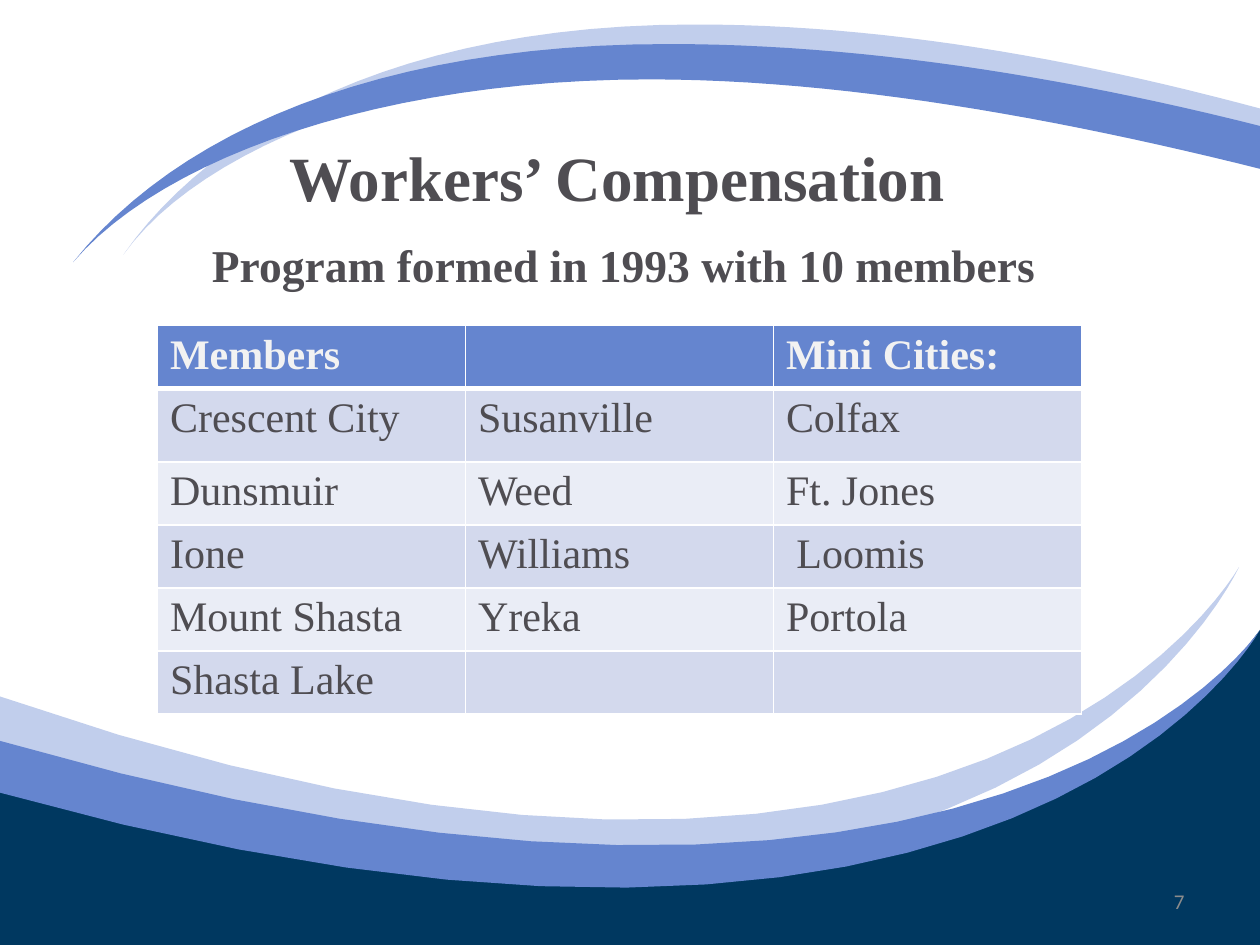
"""Build a slide listing the members of the workers' compensation program."""
from lxml import etree
from pptx import Presentation
from pptx.dml.color import RGBColor
from pptx.enum.text import MSO_ANCHOR, PP_ALIGN
from pptx.oxml.ns import qn
from pptx.util import Pt

LEFT, CENTER, RIGHT = PP_ALIGN.LEFT, PP_ALIGN.CENTER, PP_ALIGN.RIGHT
TOP, MIDDLE, BOTTOM = MSO_ANCHOR.TOP, MSO_ANCHOR.MIDDLE, MSO_ANCHOR.BOTTOM
SERIF, SANS = "Times New Roman", "Calibri"
COLORS = {
    "pale": "C1CEEC", "blue": "6585CF", "navy": "003860", "ink": "4F4D52",
    "header": "F2F2F2", "odd": "D3D9ED", "even": "EAEDF6",
    "rule": "FFFFFF", "number": "8C8C8C",
}
CURVE_STEPS = 24

ARCHES = [
    ("pale", [(720, 62), (612, 33), (504, 14), (397, 14), (230, 14), (122, 72),
              (70.5, 145.5), (115, 83.5), (238, 35.3), (385, 35.3),
              (493, 35.3), (605, 57), (720, 88.5)], []),
    ("blue", [(720, 72), (605, 43), (490, 25.2), (382, 25.2), (216, 25.2), (101, 75.6),
              (41.8, 149.8), (94, 89), (220, 45.4), (371, 45.4),
              (482, 45.4), (605, 67.7), (720, 96.5)], []),
]
WAVES = [
    ("navy", [(0, 124.6), (68.4, 142.6), (178, 174), (314, 175),
              (613, 180), (692, 73.5), (720, 36)], [(720, 216), (0, 216)]),
    ("pale", [(0, 74), (559, 268), (708, 0), (708, 0),
              (708, 0), (573, 300), (0, 108.7)], []),
    ("blue", [(0, 99.4), (569, 264), (720, 36), (720, 36),
              (720, 36), (582, 292), (0, 129)], []),
]
MEMBERS = [
    ("Members", "", "Mini Cities:"),
    ("Crescent City", "Susanville", "Colfax"),
    ("Dunsmuir", "Weed", "Ft. Jones"),
    ("Ione", "Williams", " Loomis"),
    ("Mount Shasta", "Yreka", "Portola"),
    ("Shasta Lake", "", ""),
]


def rgb(name):
    """Return the named colour."""
    return RGBColor.from_string(COLORS[name])


def trace(knots):
    """Return points along a chain of cubic curves."""
    points = [knots[0]]
    for start in range(0, len(knots) - 1, 3):
        curve = knots[start:start + 4]
        for step in range(1, CURVE_STEPS + 1):
            t = step / CURVE_STEPS
            weights = ((1 - t) ** 3, 3 * t * (1 - t) ** 2, 3 * t * t * (1 - t), t ** 3)
            points.append(tuple(sum(w * knot[axis] for w, knot in zip(weights, curve))
                                for axis in (0, 1)))
    return points


def add_swooshes(slide, left, top, swooshes):
    """Draw curved bands relative to the given corner."""
    for color, knots, corners in swooshes:
        outline = [(Pt(left + x), Pt(top + y)) for x, y in trace(knots) + corners]
        builder = slide.shapes.build_freeform(*outline[0])
        builder.add_line_segments(outline[1:], close=True)
        band = builder.convert_to_shape()
        band.shadow.inherit = False
        band.fill.solid()
        band.fill.fore_color.rgb = rgb(color)
        band.line.fill.background()


def style_text(paragraph, size, color, bold=False, face=SERIF):
    """Format every run of a paragraph."""
    for run in paragraph.runs:
        run.font.name = face
        run.font.size = Pt(size)
        run.font.bold = bold
        run.font.color.rgb = rgb(color)


def add_line_of_text(slide, box, text, size, color, align, anchor,
                     bold=False, face=SERIF, wrap=True):
    """Place one line of text in a box."""
    frame = slide.shapes.add_textbox(*map(Pt, box)).text_frame
    frame.word_wrap = wrap
    frame.vertical_anchor = anchor
    frame.text = text
    paragraph = frame.paragraphs[0]
    paragraph.alignment = align
    style_text(paragraph, size, color, bold, face)


def add_borders(cell, bottom):
    """Rule the four sides of a cell."""
    properties = cell._tc.get_or_add_tcPr()
    sides = (("a:lnL", 1), ("a:lnR", 1), ("a:lnT", 1), ("a:lnB", bottom))
    for position, (tag, width) in enumerate(sides):
        border = etree.Element(qn(tag), w=str(Pt(width)))
        fill = etree.SubElement(border, qn("a:solidFill"))
        etree.SubElement(fill, qn("a:srgbClr"), val=COLORS["rule"])
        properties.insert(position, border)


def add_members(slide, left, top, width, height):
    """Place the table of member cities."""
    columns = len(MEMBERS[0])
    tall_row = 42
    row_height = (height - tall_row) / (len(MEMBERS) - 1)
    table = slide.shapes.add_table(len(MEMBERS), columns, Pt(left), Pt(top),
                                   Pt(width), Pt(height)).table
    for column in table.columns:
        column.width = Pt(width / columns)
    for index, cities in enumerate(MEMBERS):
        is_header = index == 0
        table.rows[index].height = Pt(tall_row if index == 1 else row_height)
        band = "blue" if is_header else "odd" if index % 2 else "even"
        for column, city in enumerate(cities):
            cell = table.cell(index, column)
            cell.text = city
            style_text(cell.text_frame.paragraphs[0], 24,
                       "header" if is_header else "ink", is_header)
            cell.fill.solid()
            cell.fill.fore_color.rgb = rgb(band)
            add_borders(cell, 3 if index < 1 else 1)


def main():
    """Assemble and save the slide."""
    deck = Presentation()
    deck.slide_width, deck.slide_height = Pt(720), Pt(540)
    slide = deck.slides.add_slide(deck.slide_layouts[6])
    add_swooshes(slide, 0, 0, ARCHES)
    add_swooshes(slide, 0, 324, WAVES)
    add_line_of_text(slide, (61.5, 72, 582, 54), "Workers’ Compensation",
                     36, "ink", CENTER, BOTTOM, bold=True)
    add_members(slide, 90, 186, 528, 210.5)
    add_line_of_text(slide, (114, 132, 489, 39), "Program formed in 1993 with 10 members",
                     26, "ink", LEFT, TOP, bold=True, wrap=False)
    add_line_of_text(slide, (516, 500.5, 168, 29), "7", 12, "number",
                     RIGHT, MIDDLE, face=SANS)
    deck.save("out.pptx")


if __name__ == "__main__":
    main()
